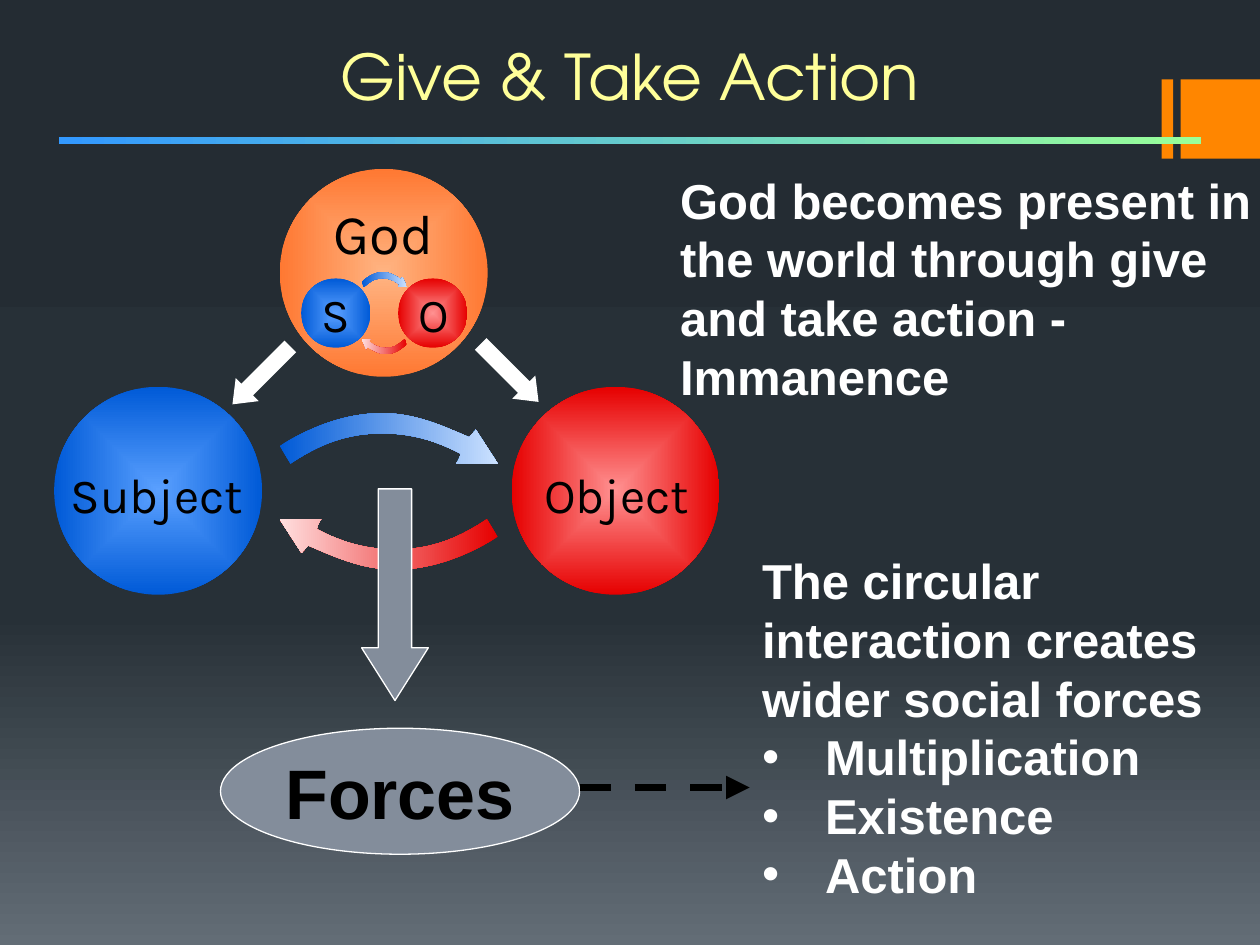
"""Build the "Give & Take Action" slide."""
from dataclasses import dataclass
from typing import Optional

from lxml import etree
from pptx import Presentation
from pptx import util as u
from pptx.dml.color import RGBColor
from pptx.enum import dml, shapes, text
from pptx.oxml.ns import qn

COLORS = {
    "orange": "FF8600", "title": "FFFF99", "white": "FFFFFF", "black": "000000", "gray": "838D9B",
    "god_light": "FFB482", "god": "FF7832",
    "blue_light": "5AA0FF", "blue": "005AD7", "blue_pale": "CBE1FF",
    "red_light": "FF9191", "red": "E60000", "red_pale": "FFDFDF",
    "rule_start": "3399FF", "rule_end": "99FF99",
    "night": "242C33", "dusk": "273037", "mist": "636D76",
}
ARROW_START = (0, 0.65)
ARROW_SEGMENTS = [
    [(0.16, 0.22), (0.32, 0), (0.47, 0)],
    [(0.63, 0), (0.76, 0.28), (0.87, 0.48)],
    [(0.9, 0.33)],
    [(1, 1)],
    [(0.81, 1)],
    [(0.81, 1), (0.83, 0.88), (0.83, 0.8)],
    [(0.71, 0.53), (0.6, 0.4), (0.47, 0.4)],
    [(0.34, 0.4), (0.21, 0.53), (0.05, 1)],
]
SHAPE = shapes.MSO_SHAPE


@dataclass
class Box:
    left: float
    top: float
    width: float
    height: float

    def lengths(self) -> list:
        return [u.Inches(v) for v in (self.left, self.top, self.width, self.height)]


@dataclass
class Circle:
    box: Box
    color: str
    label: str
    label_box: Box
    size: int
    inset: float = 0.04


@dataclass
class CurvedArrow:
    box: Box
    color: str
    rotation: int


def rgb(name: str) -> RGBColor:
    return RGBColor.from_string(COLORS[name])


def set_gradient(fill, element, stops: dict, angle: Optional[int] = 0) -> None:
    """Fill with a linear gradient, or one spreading from the centre if angle is None."""
    fill.gradient()
    gradient = element.find(".//" + qn("a:gradFill"))
    gradient.set("rotWithShape", "1")
    for child in list(gradient):
        gradient.remove(child)
    stop_list = etree.SubElement(gradient, qn("a:gsLst"))
    for position, name in stops.items():
        stop = etree.SubElement(stop_list, qn("a:gs"), pos=str(position * 1000))
        etree.SubElement(stop, qn("a:srgbClr"), val=COLORS[name])
    if angle is None:
        spread = etree.SubElement(gradient, qn("a:path"), path="shape")
        etree.SubElement(spread, qn("a:fillToRect"), l="50000", t="50000", r="50000", b="50000")
    else:
        etree.SubElement(gradient, qn("a:lin"), ang=str(angle * 60000), scaled="0")


def add_shape(slide, kind, box: Box, color: Optional[str] = None, outlined: bool = False):
    shape = slide.shapes.add_shape(kind, *box.lengths())
    shape.shadow.inherit = False
    if color:
        shape.fill.solid()
        shape.fill.fore_color.rgb = rgb(color)
    if outlined:
        shape.line.color.rgb = rgb("white")
        shape.line.width = u.Pt(0.75)
    else:
        shape.line.fill.background()
    return shape


def style(paragraph, font: str, size: int, color: str, bold: bool = False, centered: bool = True) -> None:
    paragraph.alignment = text.PP_ALIGN.CENTER if centered else text.PP_ALIGN.LEFT
    paragraph.font.name = font
    paragraph.font.size = u.Pt(size)
    paragraph.font.bold = bold
    paragraph.font.color.rgb = rgb(color)


def add_circle(slide, circle: Circle) -> None:
    shape = add_shape(slide, SHAPE.OVAL, circle.box)
    set_gradient(shape.fill, shape._element, {0: circle.color + "_light", 100: circle.color}, None)
    frame = slide.shapes.add_textbox(*circle.label_box.lengths()).text_frame
    frame.word_wrap = True
    frame.margin_left = frame.margin_right = frame.margin_top = frame.margin_bottom = u.Inches(circle.inset)
    frame.text = circle.label
    style(frame.paragraphs[0], "Karla", circle.size, "black")


def add_curved_arrow(slide, arrow: CurvedArrow) -> None:
    """Draw the outline through its corners, then bend the curved segments."""
    left, top, width, height = arrow.box.lengths()
    corners = [ARROW_START] + [segment[-1] for segment in ARROW_SEGMENTS]
    places = [(left + round(x * width), top + round(y * height)) for x, y in corners]
    builder = slide.shapes.build_freeform(*places[0])
    builder.add_line_segments(places[1:], close=True)
    shape = builder.convert_to_shape()
    lines = list(shape._element.iter(qn("a:lnTo")))
    for line, segment in zip(lines, ARROW_SEGMENTS):
        if len(segment) == 3:
            curve = etree.Element(qn("a:cubicBezTo"))
            for x, y in segment:
                etree.SubElement(curve, qn("a:pt"), x=str(round(x * width)), y=str(round(y * height)))
            line.getparent().replace(line, curve)
    shape.rotation = arrow.rotation
    shape.shadow.inherit = False
    shape.line.fill.background()
    set_gradient(shape.fill, shape._element, {0: arrow.color, 100: arrow.color + "_pale"})


def add_note(slide, box: Box, statement: str, bullets: tuple = ()) -> None:
    frame = slide.shapes.add_textbox(*box.lengths()).text_frame
    frame.word_wrap = True
    frame.text = "\n".join((statement, *bullets))
    for index, paragraph in enumerate(frame.paragraphs):
        style(paragraph, "Arial", 28, "white", bold=True, centered=False)
        if index:
            properties = paragraph._p.get_or_add_pPr()
            properties.set("marL", str(u.Inches(0.5)))
            properties.set("indent", str(-u.Inches(0.5)))
            etree.SubElement(properties, qn("a:buFont"), typeface="Arial")
            etree.SubElement(properties, qn("a:buChar"), char="•")
            properties.append(properties.find(qn("a:defRPr")))


def add_dashed_arrow(slide, left: float, right: float, y: float) -> None:
    line = slide.shapes.add_connector(
        shapes.MSO_CONNECTOR.STRAIGHT, u.Inches(left), u.Inches(y), u.Inches(right), u.Inches(y))
    line.line.color.rgb = rgb("black")
    line.line.width = u.Pt(4.5)
    line.line.dash_style = dml.MSO_LINE.DASH
    etree.SubElement(line.line._get_or_add_ln(), qn("a:tailEnd"), type="triangle")
    etree.SubElement(line._element.spPr, qn("a:effectLst"))


def main() -> None:
    presentation = Presentation()
    presentation.slide_width, presentation.slide_height = u.Inches(10), u.Inches(7.5)
    slide = presentation.slides.add_slide(presentation.slide_layouts[5])
    set_gradient(slide.background.fill, slide._element, {0: "night", 65: "dusk", 100: "mist"}, 90)

    for left, width in ((9.22, 0.09), (9.37, 0.63)):
        add_shape(slide, SHAPE.RECTANGLE, Box(left, 0.63, width, 0.63), "orange")
    title = slide.shapes.title
    title.left, title.top, title.width, title.height = Box(0, 0.05, 10, 1.1).lengths()
    title.text_frame.text = "Give & Take Action"
    title.text_frame.vertical_anchor = text.MSO_ANCHOR.MIDDLE
    style(title.text_frame.paragraphs[0], "TeX Gyre Adventor", 36, "title")

    for circle in (
        Circle(Box(2.22, 1.34, 1.65, 1.65), "god", "God", Box(2.5, 1.53, 1.09, 0.63), 32, 0.05),
        Circle(Box(2.39, 2.21, 0.55, 0.55), "blue", "S", Box(2.39, 2.22, 0.55, 0.53), 27),
        Circle(Box(3.16, 2.21, 0.55, 0.55), "red", "O", Box(3.17, 2.22, 0.55, 0.53), 27),
        Circle(Box(0.43, 3.07, 1.65, 1.65), "blue", "Subject", Box(0.43, 3.65, 1.63, 0.56), 28),
        Circle(Box(4.06, 3.07, 1.65, 1.65), "red", "Object", Box(4.08, 3.65, 1.63, 0.56), 28),
    ):
        add_circle(slide, circle)
    for left, top, rotation in ((1.75, 2.85, 315), (3.72, 2.83, 225)):
        pointer = add_shape(slide, SHAPE.LEFT_ARROW, Box(left, top, 0.65, 0.26), "white")
        pointer.rotation = rotation
        pointer.adjustments[1] = 0.64
    rule = add_shape(slide, SHAPE.RECTANGLE, Box(0.47, 1.09, 9.06, 0.05))
    set_gradient(rule.fill, rule._element, {0: "rule_start", 100: "rule_end"})
    for arrow in (
        CurvedArrow(Box(2.87, 2.16, 0.36, 0.12), "blue", 0),
        CurvedArrow(Box(2.87, 2.69, 0.36, 0.12), "red", 180),
        CurvedArrow(Box(2.22, 3.28, 1.73, 0.4), "blue", 0),
        CurvedArrow(Box(2.22, 4.12, 1.73, 0.4), "red", 180),
    ):
        add_curved_arrow(slide, arrow)

    down_arrow = add_shape(slide, SHAPE.DOWN_ARROW, Box(2.87, 3.88, 0.53, 1.68), "gray", outlined=True)
    down_arrow.adjustments[1] = 0.79
    forces = add_shape(slide, SHAPE.OVAL, Box(1.75, 5.78, 2.85, 1), "gray", outlined=True)
    forces.text_frame.word_wrap = False
    forces.text_frame.text = "Forces"
    style(forces.text_frame.paragraphs[0], "Arial", 40, "black", bold=True)
    add_dashed_arrow(slide, 4.6, 5.95, 6.25)
    add_note(slide, Box(5.95, 4.32, 4.05, 2.93), "The circular interaction creates wider social forces",
             ("Multiplication", "Existence", "Action"))
    add_note(slide, Box(5.3, 1.3, 4.8, 1.99),
             "God becomes present in the world through give and take action - Immanence")
    presentation.save("out.pptx")


if __name__ == "__main__":
    main()
